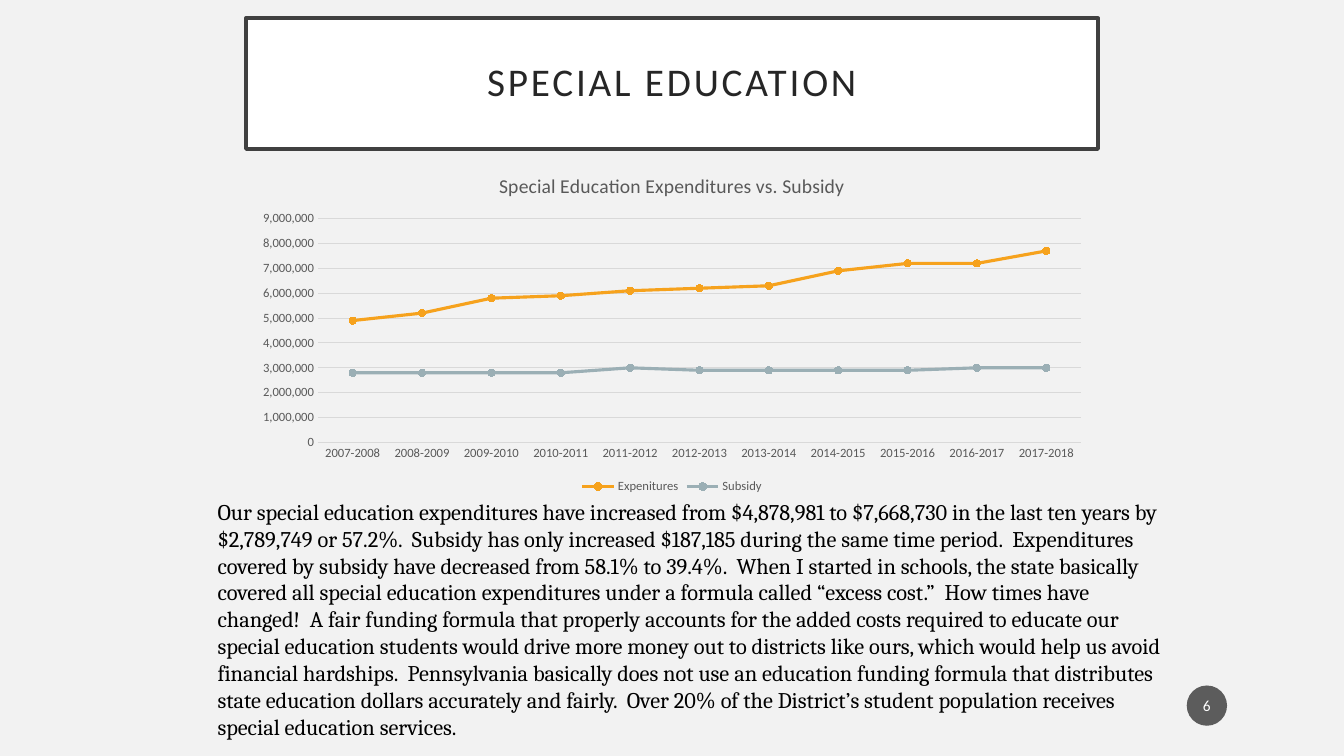
from lxml import etree
from pptx import Presentation
from pptx.chart.data import CategoryChartData
from pptx.dml.color import RGBColor
from pptx.enum.chart import (XL_CHART_TYPE as ChartType, XL_LEGEND_POSITION as LegendPos,
                             XL_MARKER_STYLE as Marker, XL_TICK_MARK as Tick)
from pptx.enum.shapes import MSO_SHAPE as Shape
from pptx.enum.text import MSO_ANCHOR as Anchor, MSO_AUTO_SIZE as AutoSize, PP_ALIGN as Align
from pptx.oxml.ns import qn
from pptx.util import Inches, Pt

WIDTH, HEIGHT = Inches(13.33), Inches(7.5)
SANS, SERIF = "Calibri", "Cambria"
GREY, GRID = "595959", "D9D9D9"

# Frames as percentages of the slide: left, top, width, height
TITLE_BOX = (18.3, 2.4, 63.4, 17.33)
CHART_BOX = (18.3, 20.67, 63.4, 45.2)
BODY_BOX = (11.7, 65.2, 76.3, 33.6)
BADGE_BOX = (88.3, 90.67, 3, 5.33)

YEARS = [f"{year}-{year + 1}" for year in range(2007, 2018)]
# Series in millions of dollars, with their colours
SERIES = {
    "Expenitures": ("F6A21D", [4.9, 5.2, 5.8, 5.9, 6.1, 6.2, 6.3, 6.9, 7.2, 7.2, 7.7]),
    "Subsidy": ("9BAFB5", [2.8, 2.8, 2.8, 2.8, 3.0, 2.9, 2.9, 2.9, 2.9, 3.0, 3.0]),
}
# Sentences of the body, set two spaces apart
SENTENCES = [
    "Our special education expenditures have increased from $4,878,981 to $7,668,730 in the "
    "last ten years by $2,789,749 or 57.2%.",
    "Subsidy has only increased $187,185 during the same time period.",
    "Expenditures covered by subsidy have decreased from 58.1% to 39.4%.",
    "When I started in schools, the state basically covered all special education expenditures "
    "under a formula called “excess cost.”",
    "How times have changed!",
    "A fair funding formula that properly accounts for the added costs required to educate our "
    "special education students would drive more money out to districts like ours, which would "
    "help us avoid financial hardships.",
    "Pennsylvania basically does not use an education funding formula that distributes state "
    "education dollars accurately and fairly.",
    "Over 20% of the District’s student population receives special education services.",
]


def rgb(code):
    return RGBColor.from_string(code)


def frame(box):
    return [int(share * side / 100) for share, side in zip(box, (WIDTH, HEIGHT) * 2)]


def style_font(font, size, color, name=SANS):
    font.size, font.name, font.bold = Pt(size), name, False
    font.color.rgb = rgb(color)


def paint(fmt, fill, line=None, weight=0.75):
    fmt.fill.solid()
    fmt.fill.fore_color.rgb = rgb(fill)
    if line:
        fmt.line.color.rgb = rgb(line)
        fmt.line.width = Pt(weight)
    else:
        fmt.line.fill.background()


def write(tf, text, size, color, name=SANS, align=Align.LEFT):
    tf.word_wrap = True
    p = tf.paragraphs[0]
    p.alignment = align
    r = p.add_run()
    r.text = text
    style_font(r.font, size, color, name)
    return p


def set_insets(tf, x, y):
    tf.margin_left = tf.margin_right = Inches(x)
    tf.margin_top = tf.margin_bottom = Inches(y)
    tf.vertical_anchor = Anchor.MIDDLE


def add_title(s, text):
    sp = s.shapes.title
    sp.left, sp.top, sp.width, sp.height = frame(TITLE_BOX)
    paint(sp, "FFFFFF", "404040", 2.5)
    tf = sp.text_frame
    tf.auto_size = AutoSize.NONE
    set_insets(tf, 0.2, 0.2)
    p = write(tf, text, 28, "262626", align=Align.CENTER)
    p.line_spacing = 0.9
    # Letter spacing in hundredths of a point
    p.runs[0].font._element.set("spc", "200")


def style_axis(axis):
    axis.major_tick_mark = axis.minor_tick_mark = Tick.NONE
    style_font(axis.tick_labels.font, 9, GREY)


def add_line_chart(s, title):
    data = CategoryChartData(number_format="#,##0")
    data.categories = YEARS
    for name, (_, millions) in SERIES.items():
        data.add_series(name, [round(value * 1_000_000) for value in millions])
    chart = s.shapes.add_chart(ChartType.LINE_MARKERS, *frame(CHART_BOX), data).chart
    style_font(chart.font, 10, "000000")

    # Title and legend
    chart.has_title = True
    r = chart.chart_title.text_frame.paragraphs[0].add_run()
    r.text = title
    style_font(r.font, 14, GREY)
    chart.chart_title.include_in_layout = False
    chart.has_legend = True
    chart.legend.position = LegendPos.BOTTOM
    chart.legend.include_in_layout = False
    style_font(chart.legend.font, 9, GREY)

    # Axes
    years, dollars = chart.category_axis, chart.value_axis
    style_axis(years)
    style_axis(dollars)
    years.format.line.color.rgb = rgb(GRID)
    years.format.line.width = Pt(0.75)
    dollars.format.line.fill.background()
    dollars.minimum_scale, dollars.maximum_scale, dollars.major_unit = 0, 9_000_000, 1_000_000
    dollars.tick_labels.number_format = "#,##0"
    dollars.tick_labels.number_format_is_linked = False
    dollars.major_gridlines.format.line.color.rgb = rgb(GRID)
    dollars.major_gridlines.format.line.width = Pt(0.75)

    # Series
    plot = chart.plots[0]
    plot.vary_by_categories = False
    for series, (color, _) in zip(plot.series, SERIES.values()):
        series.smooth = False
        series.format.line.color.rgb = rgb(color)
        series.format.line.width = Pt(2.25)
        series.marker.style, series.marker.size = Marker.CIRCLE, 5
        paint(series.marker.format, color, color)


def add_body(s, text):
    tf = s.shapes.add_textbox(*frame(BODY_BOX)).text_frame
    tf.auto_size = AutoSize.SHAPE_TO_FIT_TEXT
    p = write(tf, text, 16, "000000", SERIF)
    pPr = p._p.get_or_add_pPr()
    pPr.set("marL", str(Inches(0.5)))
    pPr.set("indent", "0")


def add_page_badge(s, number):
    sp = s.shapes.add_shape(Shape.OVAL, *frame(BADGE_BOX))
    sp.shadow.inherit = False
    paint(sp, "1D1D1D")
    color = sp._element.spPr.find(qn("a:solidFill"))[0]
    etree.SubElement(color, qn("a:alpha")).set("val", "70000")
    set_insets(sp.text_frame, 0.02, 0.05)
    write(sp.text_frame, number, 11, "FFFFFF", align=Align.CENTER)


def main():
    prs = Presentation()
    prs.slide_width, prs.slide_height = WIDTH, HEIGHT
    s = prs.slides.add_slide(prs.slide_layouts[5])
    s.background.fill.solid()
    s.background.fill.fore_color.rgb = rgb("F2F2F2")
    add_title(s, "SPECIAL EDUCATION")
    add_line_chart(s, "Special Education Expenditures vs. Subsidy")
    add_body(s, "  ".join(SENTENCES))
    add_page_badge(s, "6")
    prs.save("out.pptx")


if __name__ == "__main__":
    main()
